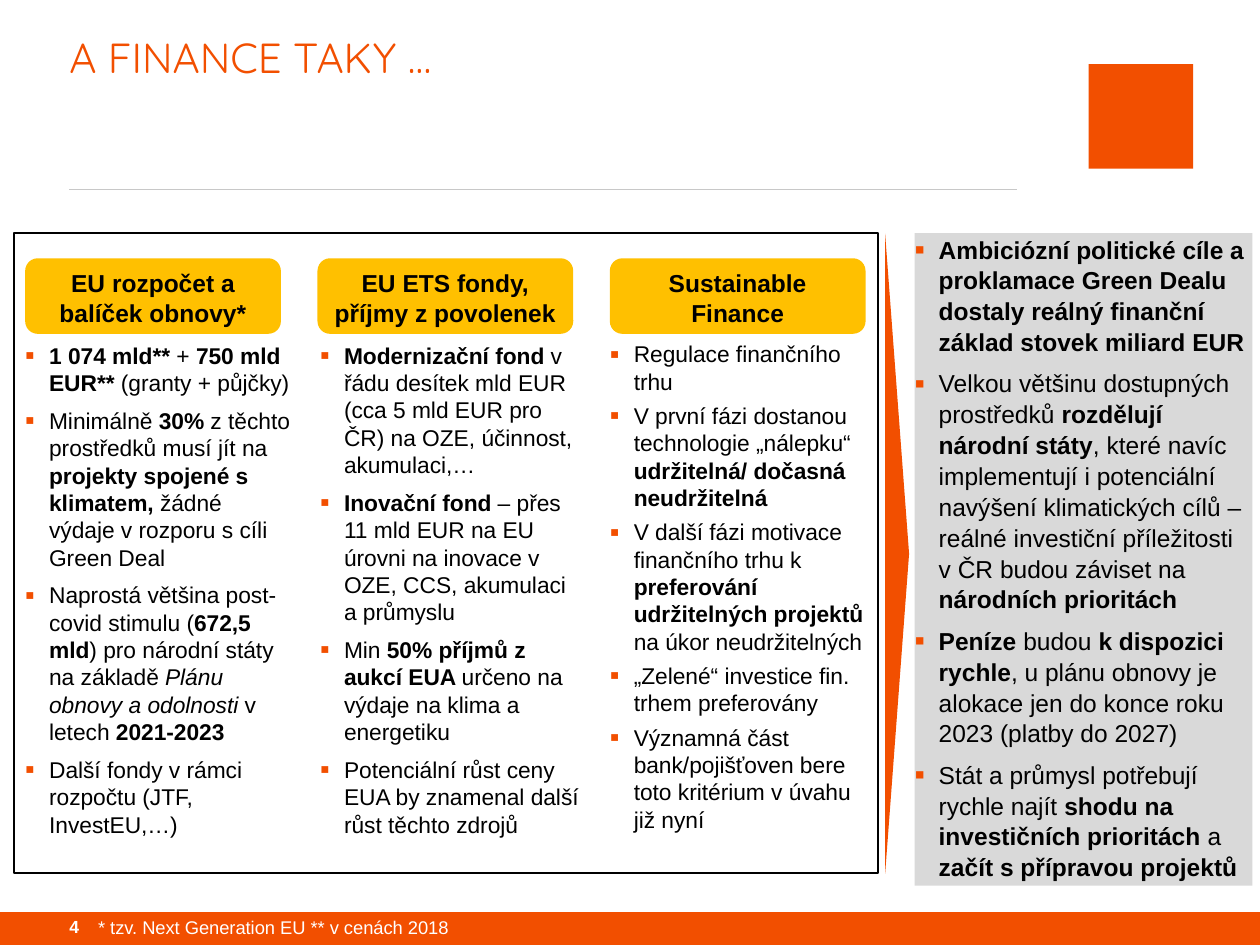
"""Build a slide on the financing of the European climate plans."""
from pptx import Presentation
from pptx.dml.color import RGBColor
from pptx.enum.shapes import MSO_CONNECTOR, MSO_SHAPE
from pptx.enum.text import MSO_ANCHOR, PP_ALIGN
from pptx.oxml.ns import qn
from pptx.util import Inches, Pt
from lxml.etree import SubElement

ORANGE = RGBColor(0xF2, 0x4F, 0x00)
YELLOW = RGBColor(0xFF, 0xC0, 0x00)
PANEL = RGBColor(0xD9, 0xD9, 0xD9)
RULE = RGBColor(0xC8, 0xC8, 0xC8)
BLACK = RGBColor(0, 0, 0)
WHITE = RGBColor(0xFF, 0xFF, 0xFF)

BOLD = {"bold": True}
ITALIC = {"italic": True}
BODY = {"name": "Arial", "size": Pt(13)}
LARGE = {"name": "Arial", "size": Pt(14)}
HEADING = {**LARGE, **BOLD}
TITLE = {"name": "Quicksand", "size": Pt(24)}
NUMBER = {"name": "Arial", "size": Pt(10), **BOLD}
FOOTNOTE = {"name": "Arial", "size": Pt(10.5)}

HEADINGS = [
    "EU rozpočet a balíček obnovy*",
    "EU ETS fondy, příjmy z povolenek",
    "Sustainable Finance",
]
BUDGET = [
    [("1 074 mld** ", BOLD), "+", (" 750 mld EUR** ", BOLD), "(granty + půjčky)"],
    ["Minimálně ", ("30%", BOLD), " z těchto prostředků musí jít na ",
     ("projekty spojené s klimatem, ", BOLD),
     "žádné výdaje v rozporu s cíli Green Deal"],
    ["Naprostá většina post- covid stimulu (", ("672,5 mld", BOLD),
     ") pro národní státy na základě ", ("Plánu obnovy a odolnosti ", ITALIC),
     "v letech ", ("2021-2023", BOLD)],
    ["Další fondy v rámci rozpočtu (JTF, InvestEU,…)"],
]
ETS_FUNDS = [
    [("Modernizační fond ", BOLD),
     "v řádu desítek mld EUR (cca 5 mld EUR pro ČR) na OZE, účinnost, akumulaci,…"],
    [("Inovační fond ", BOLD),
     "– přes 11 mld EUR na EU úrovni na inovace v OZE, CCS, akumulaci a průmyslu"],
    ["Min ", ("50% příjmů z aukcí EUA ", BOLD), "určeno na výdaje na klima a energetiku"],
    ["Potenciální růst ceny EUA by znamenal další růst těchto zdrojů"],
]
SUSTAINABLE = [
    ["Regulace finančního trhu"],
    ["V první fázi dostanou technologie „nálepku“ ",
     ("udržitelná/ dočasná neudržitelná", BOLD)],
    ["V další fázi motivace finančního trhu k ",
     ("preferování udržitelných projektů", BOLD), " na úkor neudržitelných"],
    ["„Zelené“ investice fin. trhem preferovány"],
    ["Významná část bank/pojišťoven bere toto kritérium v úvahu již nyní"],
]
CONCLUSIONS = [
    [("Ambiciózní politické cíle a proklamace Green Dealu dostaly reálný "
      "finanční základ stovek miliard EUR", BOLD)],
    ["Velkou většinu dostupných prostředků ", ("rozdělují národní státy", BOLD),
     ", které navíc implementují i potenciální navýšení klimatických cílů – "
     "reálné investiční příležitosti v ČR budou záviset na ",
     ("národních prioritách", BOLD)],
    [("Peníze", BOLD), " budou ", ("k dispozici rychle", BOLD),
     ", u plánu obnovy je alokace jen do konce roku 2023 (platby do 2027)"],
    ["Stát a průmysl potřebují rychle najít ",
     ("shodu na investičních prioritách ", BOLD), "a",
     (" začít s přípravou projektů", BOLD)],
]


def add_box(s, kind, x, y, w, h, fill=None, line=None):
    """Add a preset shape without shadow."""
    sp = s.shapes.add_shape(kind, Inches(x), Inches(y), Inches(w), Inches(h))
    sp.shadow.inherit = False
    if fill is None:
        sp.fill.background()
    else:
        sp.fill.solid()
        sp.fill.fore_color.rgb = fill
    if line is None:
        sp.line.fill.background()
    else:
        sp.line.color.rgb = line
        sp.line.width = Pt(1)
    return sp


def add_text_box(s, x, y, w, h):
    """Add an empty text box."""
    return s.shapes.add_textbox(Inches(x), Inches(y), Inches(w), Inches(h))


def set_frame(sp, inset=True, anchor=MSO_ANCHOR.TOP):
    """Wrap and anchor the text of a shape and return its frame."""
    tf = sp.text_frame
    tf.word_wrap = True
    tf.vertical_anchor = anchor
    if not inset:
        for side in ("left", "top", "right", "bottom"):
            setattr(tf, f"margin_{side}", 0)
    return tf


def add_run(p, text, font, color):
    """Append a run with the given font values."""
    r = p.add_run()
    r.text = text
    for name, value in font.items():
        setattr(r.font, name, value)
    r.font.color.rgb = color


def write_line(tf, text, font, color, **layout):
    """Write one paragraph into a frame."""
    p = tf.paragraphs[0]
    for name, value in layout.items():
        setattr(p, name, value)
    add_run(p, text, font, color)


def set_bullet(p):
    """Give a paragraph a hanging orange square bullet."""
    pPr = p._p.get_or_add_pPr()
    pPr.set("marL", str(Inches(0.19)))
    pPr.set("indent", str(-Inches(0.19)))
    color = SubElement(pPr, qn("a:buClr"))
    SubElement(color, qn("a:srgbClr"), val=str(ORANGE))
    SubElement(pPr, qn("a:buSzPct"), val="120000")
    SubElement(pPr, qn("a:buFont"), typeface="Arial")
    SubElement(pPr, qn("a:buChar"), char="▪")


def write_bullets(tf, items, font, gap, spacing=None):
    """Write bulleted paragraphs of plain and styled runs."""
    for i, item in enumerate(items):
        p = tf.add_paragraph() if i else tf.paragraphs[0]
        set_bullet(p)
        p.alignment = PP_ALIGN.LEFT
        p.space_before = Pt(gap if i else 0)
        p.line_spacing = spacing
        for run in item:
            text, style = (run, {}) if isinstance(run, str) else run
            add_run(p, text, {**font, **style}, BLACK)


def add_rule(s, x1, x2, y):
    """Add the thin rule below the title."""
    sp = s.shapes.add_connector(
        MSO_CONNECTOR.STRAIGHT, Inches(x1), Inches(y), Inches(x2), Inches(y))
    sp.line.color.rgb = RULE
    sp.line.width = Pt(0.5)
    SubElement(sp._element.spPr, qn("a:effectLst"))


def add_headings(s):
    """Add the row of column headings."""
    for i, text in enumerate(HEADINGS):
        sp = add_box(s, MSO_SHAPE.ROUNDED_RECTANGLE, 0.2 + 2.32 * i, 2.05, 2.03, 0.6, YELLOW)
        write_line(set_frame(sp), text, HEADING, BLACK, alignment=PP_ALIGN.CENTER)


def main():
    """Build and save the slide."""
    prs = Presentation()
    prs.slide_width, prs.slide_height = Inches(10), Inches(7.5)
    s = prs.slides.add_slide(prs.slide_layouts[6])

    add_box(s, MSO_SHAPE.RECTANGLE, 8.64, 0.51, 0.83, 0.83, ORANGE)
    add_box(s, MSO_SHAPE.RECTANGLE, 0, 7.24, 10, 0.26, ORANGE)
    add_rule(s, 0.55, 8.07, 1.5)
    add_box(s, MSO_SHAPE.RECTANGLE, 0.11, 1.85, 6.86, 5.08, line=BLACK)

    tf = set_frame(add_text_box(s, 0.55, 0.19, 7.52, 0.43), inset=False)
    write_line(tf, "A FINANCE TAKY …", TITLE, ORANGE, line_spacing=Pt(33))
    tf = set_frame(add_text_box(s, 0.55, 7.27, 0.34, 0.17), False, MSO_ANCHOR.MIDDLE)
    write_line(tf, "4", NUMBER, WHITE)
    tf = set_frame(add_text_box(s, 0.68, 7.22, 7.89, 0.23))
    write_line(tf, "* tzv. Next Generation EU ** v cenách 2018", FOOTNOTE, WHITE)

    arrow = add_box(s, MSO_SHAPE.ISOSCELES_TRIANGLE, 4.58, 4.3, 5.08, 0.19, ORANGE)
    arrow.rotation = 90
    panel = add_box(s, MSO_SHAPE.RECTANGLE, 7.26, 1.85, 2.68, 5.18, PANEL)
    write_bullets(set_frame(panel, inset=False), CONCLUSIONS, LARGE, 6, 1.05)

    add_headings(s)
    columns = [
        (0.2, 2.71, 2.13, 3.97, BUDGET, 6),
        (2.54, 2.71, 2.09, 3.97, ETS_FUNDS, 6),
        (4.84, 2.7, 2.03, 4.47, SUSTAINABLE, 4),
    ]
    for x, y, w, h, items, gap in columns:
        tf = set_frame(add_text_box(s, x, y, w, h), inset=False)
        write_bullets(tf, items, BODY, gap)

    prs.save("out.pptx")


if __name__ == "__main__":
    main()
